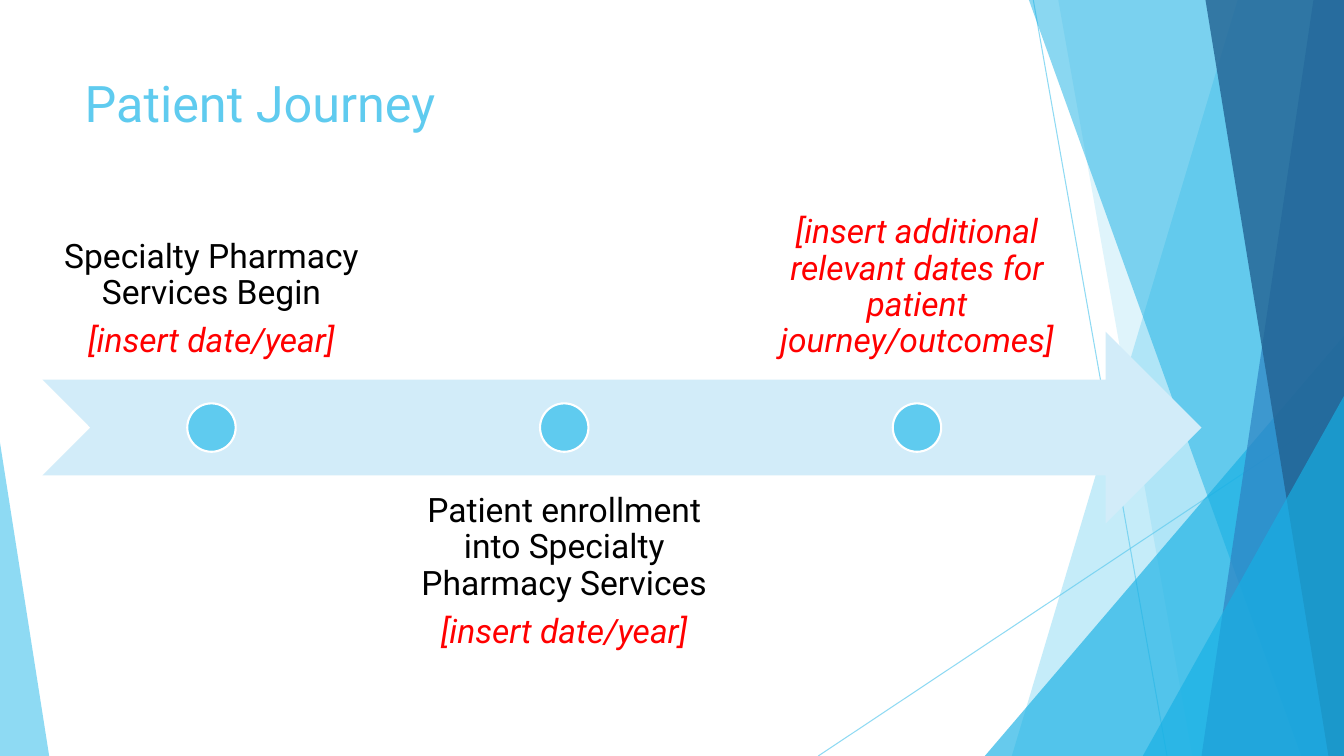
from lxml.etree import SubElement
from pptx import Presentation
from pptx.dml.color import RGBColor
from pptx.enum.shapes import MSO_CONNECTOR, MSO_SHAPE
from pptx.enum.text import MSO_ANCHOR, PP_ALIGN
from pptx.oxml.ns import qn
from pptx.util import Cm, Pt

# Content
TITLE = "Patient Journey"
BLACK, RED = "000000", "FF0000"
DATE = ("[insert date/year]", RED)
MILESTONES = [
    [("Specialty Pharmacy Services Begin", BLACK), DATE],
    [("Patient enrollment into Specialty Pharmacy Services", BLACK), DATE],
    [("[insert additional relevant dates for patient journey/outcomes]", RED)],
]

# Look and sizes in centimetres
FONT = "Roboto"
SKY, CYAN, BLUE, NAVY, PALE = "5FCBEF", "17B0E4", "2E83C3", "226292", "D2ECF9"
WIDTH, HEIGHT = 33.87, 19.05
RAYS = [(26.04, 0, 29.41, HEIGHT), (WIDTH, 10.24, 20.62, HEIGHT)]
# Bands: x at the top edge, x at the bottom edge, colour, opacity
# Triangles: left, top, width, apex position, colour, opacity
FACETS = [
    ("band", 31.19, 25.5, SKY, 36),
    ("band", 26.67, 30.05, SKY, 20),
    ("triangle", 24.82, 8.46, 9.05, 1, CYAN, 66),
    ("band", 25.93, 32.79, CYAN, 50),
    ("band", 33.1, 30.28, BLUE, 70),
    ("band", 30.38, 33.48, NAVY, 80),
    ("triangle", 28.8, 9.98, 5.07, 1, CYAN, 66),
    ("triangle", 0, 11.15, 1.24, 0, SKY, 70),
]
ARROW = (1.07, 8.36, 29.21, 4.83)
LABEL_LEFT, LABEL_STEP, LABEL_WIDTH, LABEL_HEIGHT = 1.09, 8.89, 8.48, 4.83
LABEL_ABOVE, LABEL_BELOW, LABEL_INSET = 4.72, 11.96, 0.48
DOT = 1.22


def rgb(code):
    return RGBColor.from_string(code)


def set_all(target, values):
    for name, value in values.items():
        setattr(target, name, value)


def set_opacity(fill, percent):
    color = fill.find(".//" + qn("a:srgbClr"))
    SubElement(color, qn("a:alpha"), val=str(percent * 1000))


def paint(shape, color, opacity=100):
    shape.shadow.inherit = False
    shape.fill.solid()
    shape.fill.fore_color.rgb = rgb(color)
    shape.line.fill.background()
    if opacity < 100:
        set_opacity(shape.fill._xPr, opacity)
    return shape


def add_span(para, text, size, color, italic=False):
    span = para.add_run()
    span.text = text
    set_all(span.font, {"name": FONT, "size": Pt(size), "italic": italic})
    span.font.color.rgb = rgb(color)


def add_preset(page, kind, *place):
    return page.shapes.add_shape(kind, *map(Cm, place))


def add_band(page, top_x, bottom_x):
    corners = [(WIDTH, 0), (WIDTH, HEIGHT), (bottom_x, HEIGHT)]
    outline = page.shapes.build_freeform(Cm(top_x), Cm(0))
    outline.add_line_segments([(Cm(x), Cm(y)) for x, y in corners], close=True)
    return outline.convert_to_shape()


def add_triangle(page, left, top, width, apex):
    triangle = add_preset(page, MSO_SHAPE.ISOSCELES_TRIANGLE, left, top, width, HEIGHT - top)
    triangle.adjustments[0] = apex
    return triangle


def add_background(page):
    for ends in RAYS:
        ray = page.shapes.add_connector(MSO_CONNECTOR.STRAIGHT, *map(Cm, ends))
        ray.line.width = Pt(0.75)
        ray.line.color.rgb = rgb(SKY)
        properties = ray._element.spPr
        set_opacity(properties, 70)
        SubElement(properties, qn("a:effectLst"))
    for kind, *geometry, color, opacity in FACETS:
        add_facet = add_band if kind == "band" else add_triangle
        paint(add_facet(page, *geometry), color, opacity)


def add_title(page):
    title = page.shapes.title
    set_all(title, {"left": Cm(1.88), "top": Cm(1.7), "width": Cm(23.88), "height": Cm(3.66)})
    title.text_frame.vertical_anchor = MSO_ANCHOR.TOP
    para = title.text_frame.paragraphs[0]
    para.alignment = PP_ALIGN.LEFT
    add_span(para, TITLE, 36, SKY)


def add_label(page, left, top, anchor, lines):
    box = page.shapes.add_textbox(*map(Cm, (left, top, LABEL_WIDTH, LABEL_HEIGHT)))
    frame = box.text_frame
    set_all(frame, {"word_wrap": True, "vertical_anchor": anchor})
    sides = ("left", "top", "right", "bottom")
    set_all(frame, {f"margin_{side}": Cm(LABEL_INSET) for side in sides})
    for index, (text, color) in enumerate(lines):
        para = frame.add_paragraph() if index else frame.paragraphs[0]
        set_all(para, {"alignment": PP_ALIGN.CENTER, "line_spacing": 0.9, "space_after": Pt(8.4)})
        add_span(para, text, 24, color, italic=color == RED)


def add_timeline(page):
    paint(add_preset(page, MSO_SHAPE.NOTCHED_RIGHT_ARROW, *ARROW), PALE)
    dot_top = ARROW[1] + (ARROW[3] - DOT) / 2
    for index, lines in enumerate(MILESTONES):
        left = LABEL_LEFT + index * LABEL_STEP
        # Labels alternate above and below the arrow
        if index % 2:
            add_label(page, left, LABEL_BELOW, MSO_ANCHOR.TOP, lines)
        else:
            add_label(page, left, LABEL_ABOVE, MSO_ANCHOR.BOTTOM, lines)
        dot_left = left + (LABEL_WIDTH - DOT) / 2
        dot = paint(add_preset(page, MSO_SHAPE.OVAL, dot_left, dot_top, DOT, DOT), SKY)
        dot.line.color.rgb = rgb("FFFFFF")
        dot.line.width = Pt(1.5)


def main():
    deck = Presentation()
    set_all(deck, {"slide_width": Cm(WIDTH), "slide_height": Cm(HEIGHT)})
    page = deck.slides.add_slide(deck.slide_layouts[5])
    add_background(page)
    add_title(page)
    add_timeline(page)
    deck.save("out.pptx")


if __name__ == "__main__":
    main()
